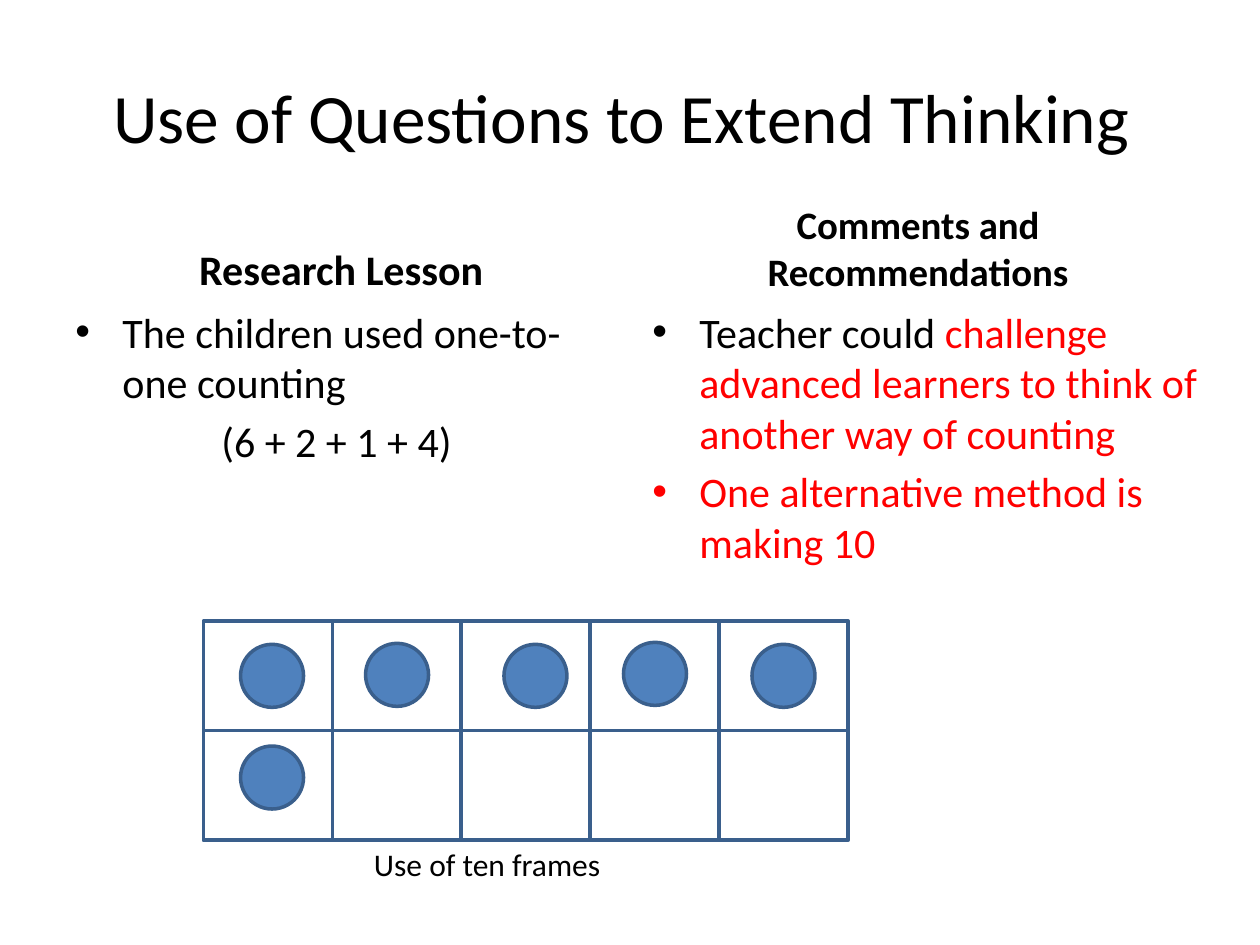
from lxml import etree
from pptx import Presentation
from pptx.dml.color import RGBColor
from pptx.enum.shapes import MSO_SHAPE
from pptx.enum.text import MSO_ANCHOR, PP_ALIGN
from pptx.oxml.ns import qn
from pptx.util import Cm, Pt

BLACK = RGBColor(0x00, 0x00, 0x00)
RED = RGBColor(0xFF, 0x00, 0x00)
WHITE = RGBColor(0xFF, 0xFF, 0xFF)
BLUE = RGBColor(0x4F, 0x81, 0xBD)
NAVY = RGBColor(0x3A, 0x5F, 0x8C)

RECT, OVAL = MSO_SHAPE.RECTANGLE, MSO_SHAPE.OVAL
TOP, MIDDLE, BOTTOM = MSO_ANCHOR.TOP, MSO_ANCHOR.MIDDLE, MSO_ANCHOR.BOTTOM
LEFT, CENTER = PP_ALIGN.LEFT, PP_ALIGN.CENTER


def write(para, text, size=24, color=BLACK, bold=False):
    run = para.add_run()
    run.text = text
    font = run.font
    font.name, font.size, font.bold = "Calibri", Pt(size), bold
    font.color.rgb = color


def bullet(para):
    """Give the paragraph a hanging bullet."""
    props = para._p.get_or_add_pPr()
    indent = Cm(0.95)
    props.set("marL", str(indent))
    props.set("indent", str(-indent))
    etree.SubElement(props, qn("a:buFont")).set("typeface", "Arial")
    etree.SubElement(props, qn("a:buChar")).set("char", "•")


class Page:
    font_gap = 0.2
    line = 2

    def __init__(self, slide):
        self.slide = slide

    def box(self, x, y, w, h, anchor=TOP):
        shape = self.slide.shapes.add_textbox(Cm(x), Cm(y), Cm(w), Cm(h))
        frame = shape.text_frame
        frame.word_wrap = True
        frame.vertical_anchor = anchor
        return frame

    def label(self, text, x, y, w, h, anchor=TOP, align=CENTER, **style):
        para = self.box(x, y, w, h, anchor).paragraphs[0]
        para.alignment = align
        write(para, text, **style)

    def body(self, items, x, y, w, h):
        """Each item is (bulleted, runs), a run being (text, color)."""
        frame = self.box(x, y, w, h)
        for i, (dotted, runs) in enumerate(items):
            para = frame.add_paragraph() if i else frame.paragraphs[0]
            para.alignment = LEFT if dotted else CENTER
            para.space_before = Pt(24 * self.font_gap)
            if dotted:
                bullet(para)
            for text, color in runs:
                write(para, text, color=color)

    def shape(self, kind, x, y, w, h, fill):
        item = self.slide.shapes.add_shape(kind, Cm(x), Cm(y), Cm(w), Cm(h))
        item.shadow.inherit = False
        item.fill.solid()
        item.fill.fore_color.rgb = fill
        item.line.color.rgb = NAVY
        item.line.width = Pt(self.line)

    def frame(self, x, y, w, h, rows=2, cols=5):
        """Draw the empty cells of a ten frame."""
        for row in range(rows):
            for col in range(cols):
                self.shape(RECT, x + col * w, y + row * h, w, h, WHITE)


def main():
    deck = Presentation()
    deck.slide_width, deck.slide_height = Cm(25.4), Cm(19.05)
    page = Page(deck.slides.add_slide(deck.slide_layouts[6]))

    page.label("Use of Questions to Extend Thinking", 1.1, 0.74, 22.86, 3.18,
               anchor=MIDDLE, size=39.6)

    near, far = 1.27, 12.9
    for text, x, size in (("Research Lesson", near, 24),
                          ("Comments and Recommendations", far, 22.2)):
        page.label(text, x, 4.27, 11.22, 1.78, anchor=BOTTOM, size=size, bold=True)

    page.body([
        (True, [("The children used one-to-one counting", BLACK)]),
        (False, [("(6 + 2 + 1 + 4) ", BLACK)]),
    ], near, 6.05, 11.22, 10.97)
    page.body([
        (True, [("Teacher could ", BLACK),
                ("challenge advanced learners to think of another way of counting", RED)]),
        (True, [("One alternative method is making 10", RED)]),
    ], far, 6.05, 12.2, 10.97)

    page.frame(4.1, 12.52, 2.6, 2.21)
    page.label("Use of ten frames", 7.29, 16.92, 7.39, 1.02, align=LEFT, size=18)

    dots = [(4.85, 12.99), (7.37, 12.97), (10.16, 12.99),
            (12.57, 12.95), (15.16, 12.99), (4.85, 15.04)]
    for x, y in dots:
        page.shape(OVAL, x, y, 1.27, 1.27, BLUE)

    deck.save("out.pptx")


if __name__ == "__main__":
    main()
